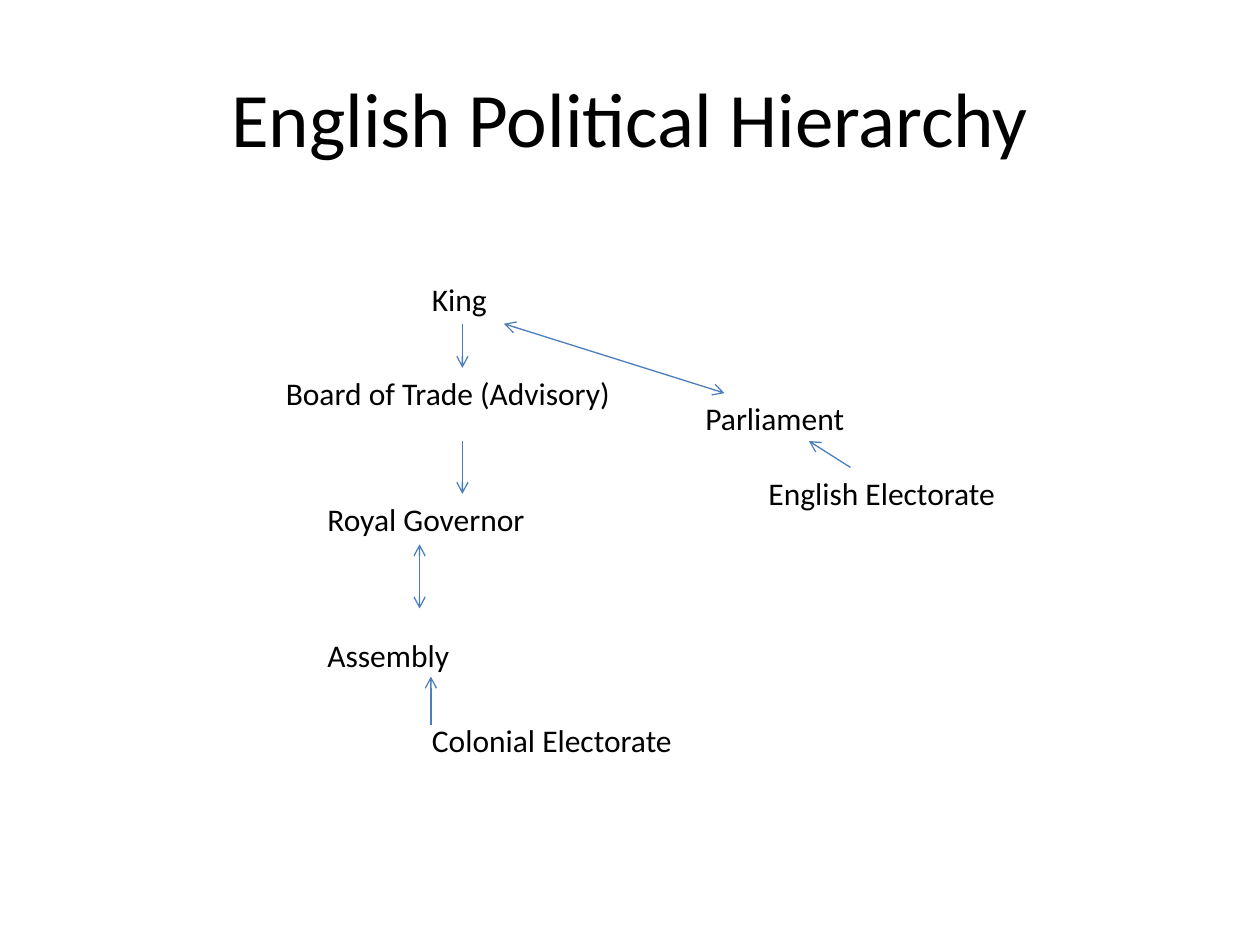
from pptx import Presentation
from pptx.dml.color import RGBColor
from pptx.enum.shapes import MSO_CONNECTOR
from pptx.enum.text import MSO_ANCHOR, MSO_AUTO_SIZE, PP_ALIGN
from pptx.oxml.ns import qn
from pptx.util import Inches, Pt
from lxml import etree

STRAIGHT = MSO_CONNECTOR.STRAIGHT
TOP, MIDDLE = MSO_ANCHOR.TOP, MSO_ANCHOR.MIDDLE
LEFT, CENTER = PP_ALIGN.LEFT, PP_ALIGN.CENTER
GROW, FIXED = MSO_AUTO_SIZE.SHAPE_TO_FIT_TEXT, MSO_AUTO_SIZE.NONE

COLORS = {"background": "FFFFFF", "text": "000000", "arrow": "4B7EBC"}
LABEL_HEIGHT = 0.4

# Text, left, top, width
LABELS = [
    ("King", 3.33, 2.17, 2.83),
    ("Board of Trade (Advisory)", 2.17, 2.92, 5),
    ("Royal Governor", 2.5, 3.92, 3.67),
    ("Assembly", 2.5, 5, 3.25),
    ("Colonial Electorate", 3.33, 5.67, 2.42),
    ("Parliament", 5.5, 3.12, 3.67),
    ("English Electorate", 6, 3.71, 2.92),
]

# Start, end, whether the arrow points both ways
ARROWS = [
    ((3.67, 2.57), (3.67, 2.92), False),  # King to Board of Trade
    ((3.67, 3.5), (3.67, 3.92), False),   # Board of Trade to Governor
    ((3.33, 4.32), (3.33, 4.83), True),   # Governor and Assembly
    ((3.42, 5.75), (3.42, 5.37), False),  # Colonial Electorate to Assembly
    ((4, 2.57), (5.75, 3.12), True),      # King and Parliament
    ((6.75, 3.71), (6.42, 3.5), False),   # English Electorate to Parliament
]


class HierarchySlide:
    font_name = "Calibri"
    line_width = 0.75

    def __init__(self, presentation):
        self.slide = presentation.slides.add_slide(presentation.slide_layouts[6])
        fill = self.slide.background.fill
        fill.solid()
        fill.fore_color.rgb = RGBColor.from_string(COLORS["background"])

    def add_text(self, text, left, top, width, height=LABEL_HEIGHT, size=18,
                 alignment=LEFT, anchor=TOP, auto_size=GROW):
        shape = self.slide.shapes.add_textbox(
            *(Inches(value) for value in (left, top, width, height)))
        frame_format = {"word_wrap": True, "auto_size": auto_size,
                        "vertical_anchor": anchor}
        for name, value in frame_format.items():
            setattr(shape.text_frame, name, value)
        paragraph = shape.text_frame.paragraphs[0]
        paragraph.alignment = alignment
        run = paragraph.add_run()
        run.text = text
        font_format = {"name": self.font_name, "size": Pt(size)}
        for name, value in font_format.items():
            setattr(run.font, name, value)
        run.font.color.rgb = RGBColor.from_string(COLORS["text"])

    def add_arrow(self, start, end, both_ways):
        connector = self.slide.shapes.add_connector(
            STRAIGHT, *(Inches(value) for value in start + end))
        connector.line.width = Pt(self.line_width)
        connector.line.color.rgb = RGBColor.from_string(COLORS["arrow"])
        line = connector.line._get_or_add_ln()
        for tag in ["a:headEnd", "a:tailEnd"] if both_ways else ["a:tailEnd"]:
            etree.SubElement(line, qn(tag), type="arrow")
        # An empty effect list turns the shadow off
        etree.SubElement(connector._element.spPr, qn("a:effectLst"))


def main():
    presentation = Presentation()
    presentation.slide_width = Inches(10)
    presentation.slide_height = Inches(7.5)
    hierarchy = HierarchySlide(presentation)

    # Title
    hierarchy.add_text("English Political Hierarchy", 0.5, 0.3, 9, 1.25, size=44,
                       alignment=CENTER, anchor=MIDDLE, auto_size=FIXED)

    # Offices and electorates
    for label in LABELS:
        hierarchy.add_text(*label)

    # Lines of authority
    for arrow in ARROWS:
        hierarchy.add_arrow(*arrow)

    presentation.save("out.pptx")


if __name__ == "__main__":
    main()
